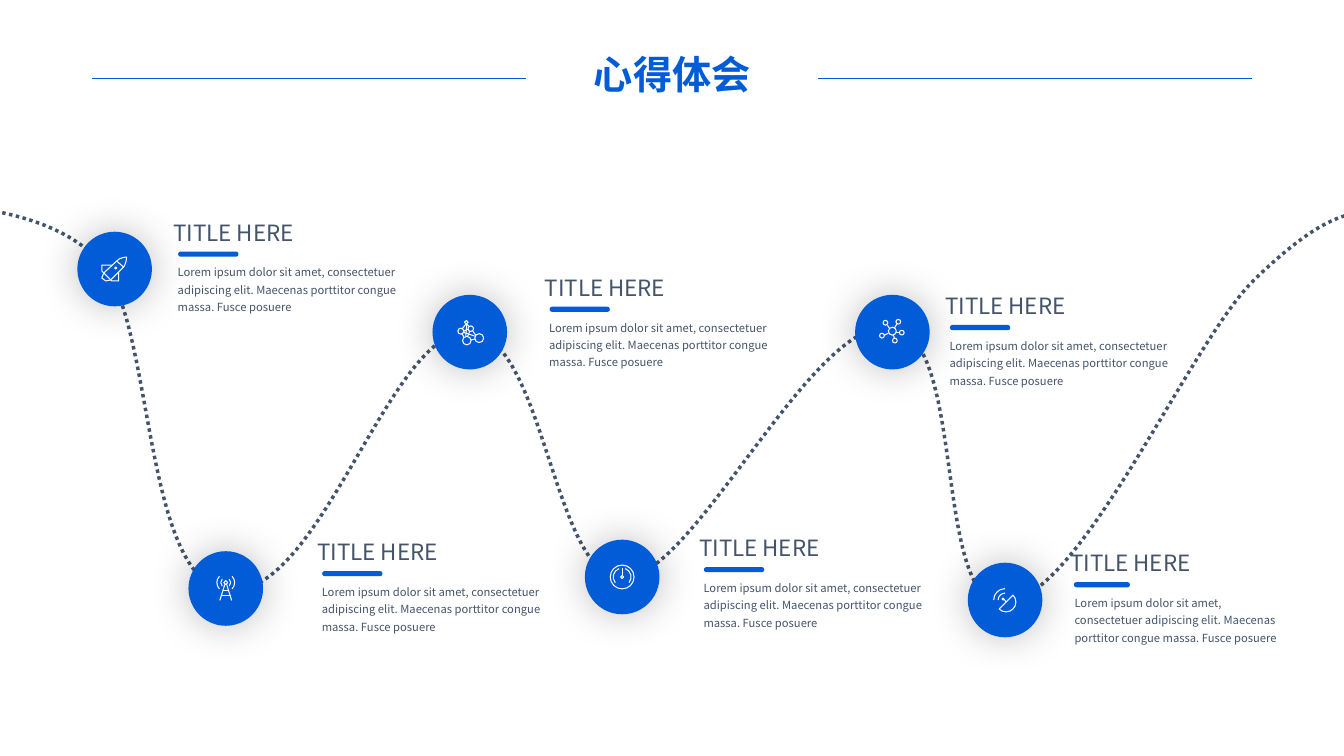
from dataclasses import dataclass
from math import ceil, cos, radians, sin, tan

from lxml import etree
from pptx import Presentation
from pptx import util as u
from pptx.dml.color import RGBColor
from pptx.enum import dml, shapes, text
from pptx.oxml import parse_xml
from pptx.oxml.ns import nsdecls, qn


@dataclass(frozen=True)
class Theme:
    font: str = "Noto Sans CJK SC"
    blue: str = "025CD7"
    slate: str = "44546A"
    white: str = "FFFFFF"
    heading: int = 28
    title: int = 16
    body: int = 8


THEME = Theme()
HEADING = "心得体会"
TITLE = "TITLE HERE"
BODY = ("Lorem ipsum dolor sit amet, consectetuer adipiscing elit. "
        "Maecenas porttitor congue massa. Fusce posuere")

# Lengths are centimetres: (disc centre, note corner, note scale, icon)
STOPS = [
    ((2.89, 6.78), (4.12, 5.39), 1, "rocket"),
    ((5.69, 14.83), (7.75, 13.44), 1, "tower"),
    ((11.84, 8.37), (13.48, 6.78), 1, "molecule"),
    ((15.68, 14.54), (17.37, 13.34), 1, "gauge"),
    ((22.49, 8.37), (23.57, 7.24), 1, "network"),
    ((25.33, 15.12), (26.72, 13.72), 0.93, "dish"),
]
DISC = 1.88
HEADING_RULES = [(2.31, 13.26), (20.62, 31.55)]
RULE_Y = 1.98

# A stroke is a start point, then steps: (x, y) is a line,
# six numbers are a curve with two control points and an end
ROAD = [
    (-1.83, 4.98),
    (-1.7, 5.26, 1.35, 5.08, 2.62, 6.73),
    (3.91, 8.38, 3.61, 14.94, 5.87, 14.88),
    (8.15, 14.83, 9.83, 8.33, 11.79, 8.36),
    (13.74, 8.38, 13.92, 14.61, 15.7, 14.58),
    (17.48, 14.55, 20.37, 8.15, 22.4, 8.23),
    (24.43, 8.31, 23.44, 15.37, 25.35, 15.19),
    (27.28, 14.99, 29.97, 8.66, 31.6, 7.06),
    (33.22, 5.49, 34.29, 5, 35.15, 5.64),
]


def arc(x, y, radius, start=0, end=360):
    """Stroke along a circle, clockwise from the right; a full ring by default."""
    count = ceil((end - start) / 90)
    sweep = radians(end - start) / count
    reach = 4 / 3 * tan(sweep / 4)

    def spot(angle, pull=0):
        return (x + radius * (cos(angle) - pull * sin(angle)),
                y + radius * (sin(angle) + pull * cos(angle)))

    angles = [radians(start) + sweep * i for i in range(count + 1)]
    return [spot(angles[0])] + [spot(a, reach) + spot(b, -reach) + spot(b)
                                for a, b in zip(angles, angles[1:])]


# Strokes around the disc centre, in fortieths of a centimetre
ICON_UNIT = 1 / 40
ICONS = {
    "rocket": [
        [(12, -12), (12, -6, 9, -2, 9, -2), (-4, 11), (-9, 12), (-13, 9), (-11, 4),
         (2, -8), (5, -12, 12, -12, 12, -12)],
        [(2, -8), (9, -2)],
        [(-3, -4), (-13, -4), (-13, 2), (-11, 4), (-3, 12), (4, 12), (4, 3)],
        arc(1, -1, 1),
    ],
    "tower": [
        arc(0, -6, 2),
        [(-6, 12), (-1, -4)], [(6, 12), (1, -4)], [(-3, 2), (3, 2)], [(-5, 7), (5, 7)],
        *[arc(0, -6, r, a, a + 90) for r in (5, 9) for a in (-45, 135)],
    ],
    "molecule": [
        arc(-3.5, -10, 1.8), arc(-9, -1, 3), arc(-3, 8.5, 4.3),
        arc(1, -3.5, 2.8), arc(9.5, 6, 4.5),
        [(5, 7), (1, 8)], [(-6, -1), (-2, -3)], [(-2, 4), (0, -1)],
        [(-6, 5), (-8, 1)], [(5, 4), (-7, 0)], [(-4, -8), (-8, -3)],
        [(6, 3), (3, -1)], [(-4, 4), (-3, -8)], [(-3, -8), (-1, -6)],
    ],
    "gauge": [
        arc(0, 0, 1.5), arc(0, 0, 12), arc(0, 0, 9, -70, 40), arc(0, 0, 9, 140, 250),
        [(0, -9), (0, -2)],
    ],
    "network": [
        arc(0, -1, 4), arc(6, -10.5, 2.4), arc(-7, -9.5, 2.4), arc(-10.5, 3.5, 2.4),
        arc(2.5, 8.5, 2.4), arc(9.5, 0.5, 2.4),
        [(5, -9), (2, -4)], [(-3, -4), (-5, -7)], [(-8, 3), (-4, 1)],
        [(2, 6), (1, 3)], [(4, 0), (7, 0)],
    ],
    "dish": [
        [(1, 2), (-1, -1)], arc(-2, -1, 1),
        arc(0, 0, 7, 180, 270), arc(0, 0, 11.5, 180, 270),
        [(-6, 9), *arc(1, 2, 9.9, -45, 135)],
    ],
}


def color(value):
    return RGBColor.from_string(value)


def lengths(*values):
    return [u.Cm(v) for v in values]


def add_text(parent, words, at, size, ink, bold=False, align=text.PP_ALIGN.LEFT,
             anchor=text.MSO_ANCHOR.TOP, spacing=None):
    frame = parent.add_textbox(*lengths(*at)).text_frame
    frame.word_wrap = True
    frame.auto_size = text.MSO_AUTO_SIZE.SHAPE_TO_FIT_TEXT
    frame.vertical_anchor = anchor
    para = frame.paragraphs[0]
    para.alignment = align
    para.line_spacing = spacing
    span = para.add_run()
    span.text = words
    span.font.size, span.font.bold, span.font.name = u.Pt(size), bold, THEME.font
    span.font.color.rgb = color(ink)
    etree.SubElement(span.font._element, qn("a:ea")).set("typeface", THEME.font)


def add_solid(parent, kind, at):
    shape = parent.add_shape(kind, *lengths(*at))
    shape.shadow.inherit = False
    shape.fill.solid()
    shape.fill.fore_color.rgb = color(THEME.blue)
    shape.line.fill.background()
    return shape


def add_strokes(parent, strokes, ink, width, dash=None):
    """Draw all strokes as one unfilled outline, bending the steps that are curves."""
    strokes = [[lengths(*step) for step in stroke] for stroke in strokes]
    builder = parent.build_freeform(*strokes[0][0], scale=1.0)
    for i, (start, *steps) in enumerate(strokes):
        if i:
            builder.move_to(*start)
        builder.add_line_segments([step[-2:] for step in steps], close=False)
    outline = builder.convert_to_shape()
    steps = [step for stroke in strokes for step in stroke[1:]]
    for step, segment in zip(steps, list(outline._element.iter(qn("a:lnTo")))):
        if len(step) == 6:
            segment.tag = qn("a:cubicBezTo")
            corners = [etree.Element(qn("a:pt"), x=str(x - outline.left), y=str(y - outline.top))
                       for x, y in zip(step[::2], step[1::2])]
            segment[:] = corners
    outline.shadow.inherit = False
    outline.fill.background()
    outline.line.color.rgb = color(ink)
    outline.line.width = u.Pt(width)
    if dash:
        outline.line.dash_style = dash


def add_rule(page, left, right):
    rule = page.shapes.add_connector(
        shapes.MSO_CONNECTOR.STRAIGHT, *lengths(left, RULE_Y, right, RULE_Y))
    rule.line.color.rgb = color(THEME.blue)
    rule.line.width = u.Pt(0.5)
    etree.SubElement(rule._element.spPr, qn("a:effectLst"))


def add_disc(page, x, y):
    disc = add_solid(page.shapes, shapes.MSO_SHAPE.OVAL,
                     (x - DISC / 2, y - DISC / 2, DISC, DISC))
    disc._element.spPr.find(qn("a:effectLst")).append(parse_xml(
        f'<a:outerShdw {nsdecls("a")} blurRad="{u.Pt(29)}" dist="0" algn="ctr" '
        'rotWithShape="0"><a:srgbClr val="000000"><a:alpha val="25000"/>'
        '</a:srgbClr></a:outerShdw>'))


def add_note(page, x, y, scale):
    note = page.shapes.add_group_shape().shapes
    add_text(note, TITLE, (x, y, 5.84 * scale, 0.94), THEME.title, THEME.slate)
    add_text(note, BODY, (x + 0.11, y + 1.08, 6.17 * scale, 1.55), THEME.body,
             THEME.slate, spacing=1.3)
    bar = add_solid(note, shapes.MSO_SHAPE.ROUNDED_RECTANGLE,
                    (x + 0.37 * scale, y + 0.95, 1.52 * scale, 0.13))
    bar.adjustments[0] = 0.5


def main():
    deck = Presentation()
    deck.slide_width, deck.slide_height = lengths(33.87, 19.05)
    page = deck.slides.add_slide(deck.slide_layouts[6])
    for left, right in HEADING_RULES:
        add_rule(page, left, right)
    add_text(page.shapes, HEADING, (13.31, 1.14, 7.26, 1.45), THEME.heading, THEME.blue,
             bold=True, align=text.PP_ALIGN.CENTER, anchor=text.MSO_ANCHOR.MIDDLE)
    add_strokes(page.shapes, [ROAD], THEME.slate, 2.5, dml.MSO_LINE.ROUND_DOT)
    for center, _, _, _ in STOPS:
        add_disc(page, *center)
    for _, corner, scale, _ in STOPS:
        add_note(page, *corner, scale)
    for center, _, _, icon in STOPS:
        strokes = [[[center[i % 2] + v * ICON_UNIT for i, v in enumerate(step)]
                    for step in stroke] for stroke in ICONS[icon]]
        add_strokes(page.shapes, strokes, THEME.white, 0.75)
    deck.save("out.pptx")


if __name__ == "__main__":
    main()
